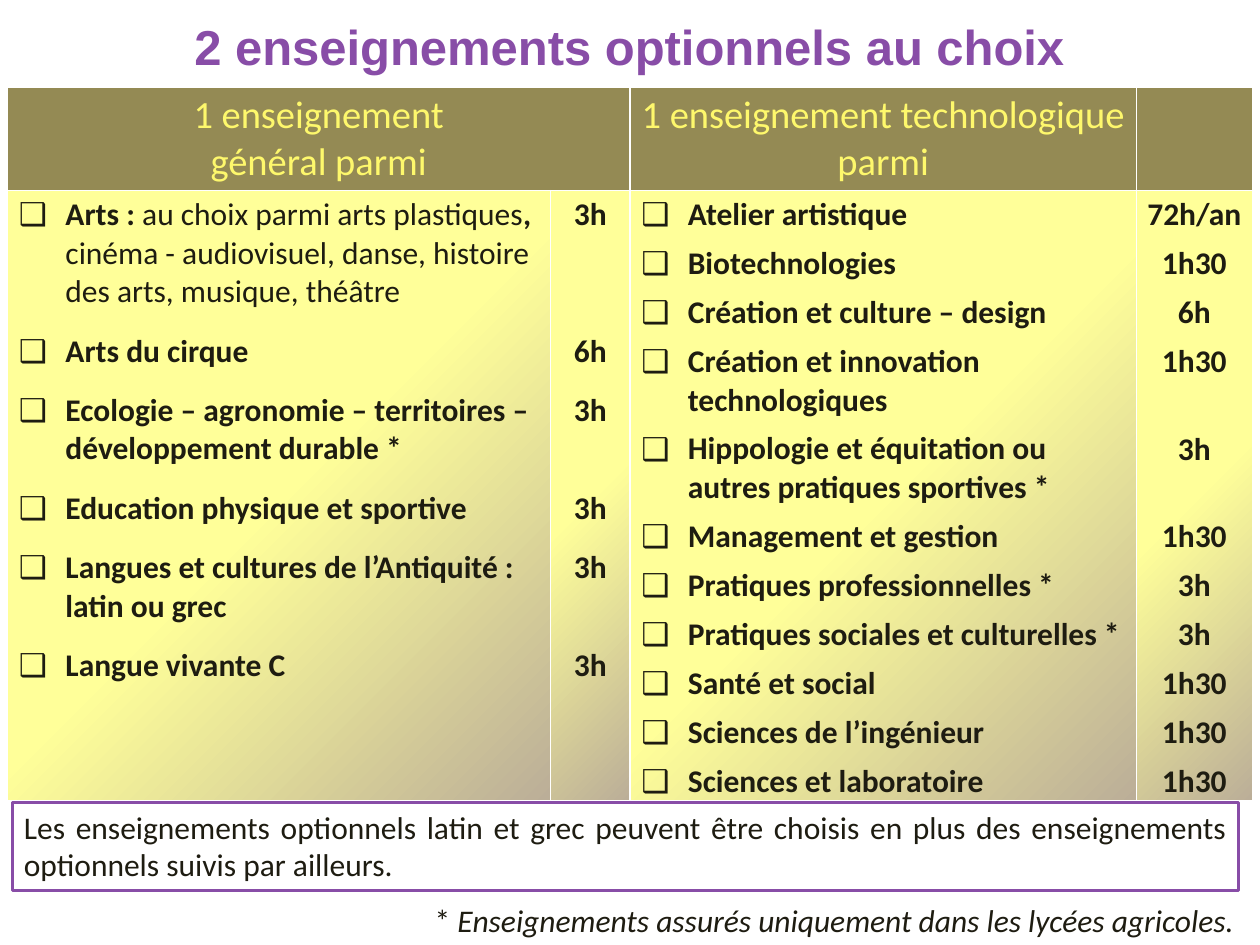
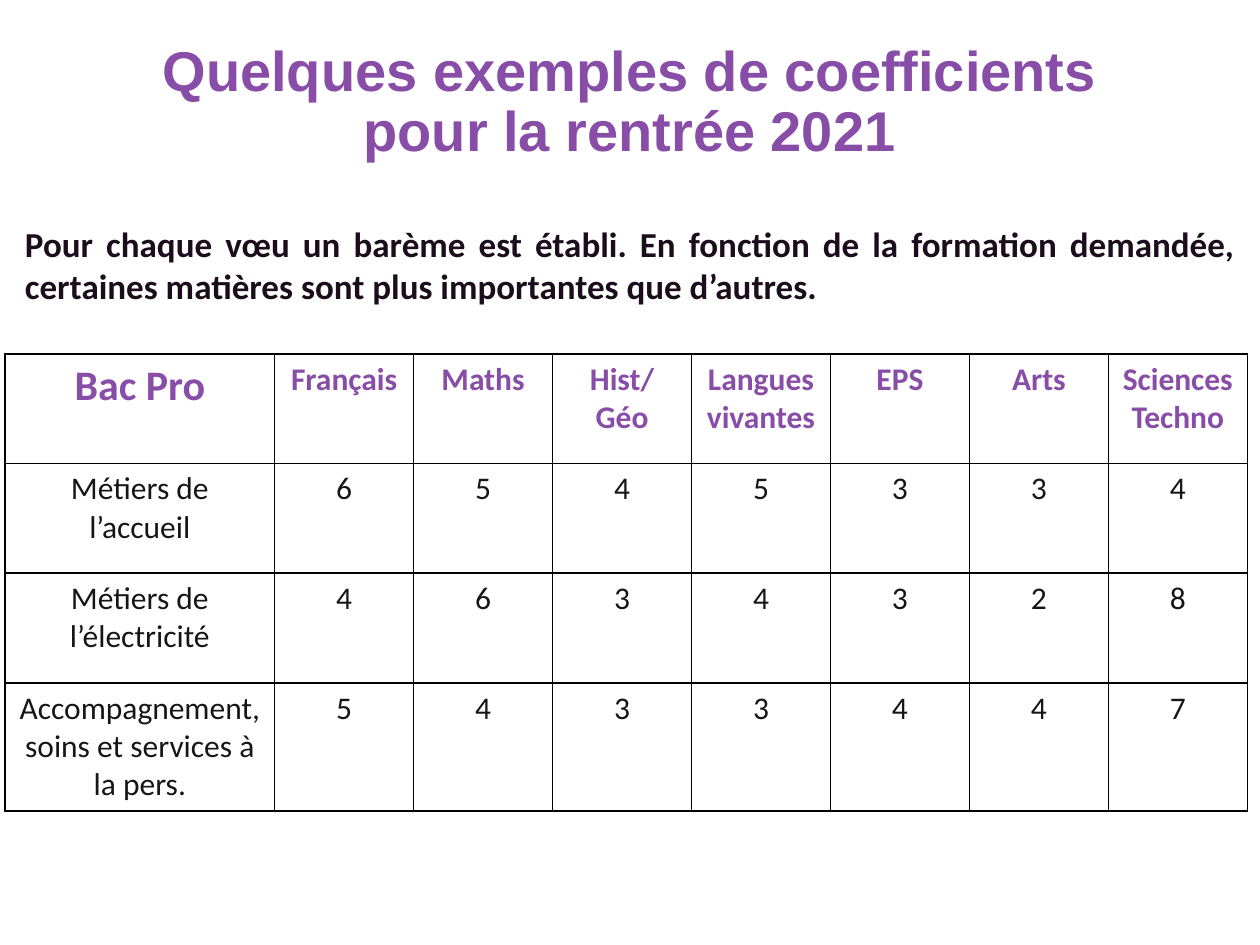
from dataclasses import dataclass, replace

from lxml import etree
from pptx import Presentation
from pptx import util as u
from pptx.dml.color import RGBColor
from pptx.enum import shapes, text
from pptx.oxml import ns

# Shared look
PURPLE, INK, KHAKI, LEMON = "884DA7", "1E1C11", "948A54", "FEF86C"
WHITE, BLACK = "FFFFFF", "000000"
LINE_HEIGHT = 22  # points, one line of 18 pt body text
ALIGN = text.PP_ALIGN
ANCHOR = text.MSO_ANCHOR


@dataclass(frozen=True)
class Style:
    size: float
    color: str
    bold: bool = False
    italic: bool = False
    name: str = "Calibri"


@dataclass(frozen=True)
class Box:
    left: float
    top: float
    width: float
    height: float

    def lengths(self) -> tuple:
        return tuple(map(u.Inches, (self.left, self.top, self.width, self.height)))


@dataclass(frozen=True)
class Option:
    """A course: label pieces alternate bold and plain, lines is its height."""
    hours: str
    label: tuple[str, ...]
    lines: int = 1


BODY = Style(18, INK)
STRONG = replace(BODY, bold=True)

GENERAL = [
    Option("3h", ("Arts : ", "au choix parmi arts plastiques", ", ",
                  "cinéma - audiovisuel, danse, histoire des arts, musique, théâtre"), 3),
    Option("6h", ("Arts du cirque",)),
    Option("3h", ("Ecologie – agronomie – territoires – développement durable *",), 2),
    Option("3h", ("Education physique et sportive",)),
    Option("3h", ("Langues et cultures de l’Antiquité : latin ou grec",), 2),
    Option("3h", ("Langue vivante C",)),
]
TECHNOLOGICAL = [
    Option("72h/an", ("Atelier artistique",)),
    Option("1h30", ("Biotechnologies",)),
    Option("6h", ("Création et culture – design",)),
    Option("1h30", ("Création et innovation technologiques",), 2),
    Option("3h", ("Hippologie et équitation ou autres pratiques sportives *",), 2),
    Option("1h30", ("Management et gestion",)),
    Option("3h", ("Pratiques professionnelles *",)),
    Option("3h", ("Pratiques sociales et culturelles *",)),
    Option("1h30", ("Santé et social",)),
    Option("1h30", ("Sciences de l’ingénieur",)),
    Option("1h30", ("Sciences et laboratoire",)),
]
COEFFICIENTS = [
    ("Bac Pro", "Français", "Maths", "Hist/\nGéo", "Langues vivantes", "EPS", "Arts",
     "Sciences Techno"),
    ("Métiers de l’accueil", 6, 5, 4, 5, 3, 3, 4),
    ("Métiers de l’électricité", 4, 6, 3, 4, 3, 2, 8),
    ("Accompagnement, soins et services à la pers.", 5, 4, 3, 3, 4, 4, 7),
]


# Text helpers
def rgb(color: str) -> RGBColor:
    return RGBColor.from_string(color)


def add_run(paragraph, words: str, style: Style) -> None:
    run = paragraph.add_run()
    run.text = words
    values = {"size": u.Pt(style.size), "bold": style.bold,
              "italic": style.italic, "name": style.name}
    for attribute, value in values.items():
        setattr(run.font, attribute, value)
    run.font.color.rgb = rgb(style.color)


def next_paragraph(frame):
    first = frame.paragraphs[0]
    return frame.add_paragraph() if first.runs else first


def write(frame, words: str, style: Style, **formats) -> None:
    """Write each line of words as a paragraph with the given format values."""
    for line in words.split("\n"):
        paragraph = next_paragraph(frame)
        add_run(paragraph, line, style)
        for attribute, value in formats.items():
            setattr(paragraph, attribute, value)


def set_frame(frame, inset_x: float, inset_y: float, anchor=ANCHOR.TOP) -> None:
    values = {"word_wrap": True, "auto_size": text.MSO_AUTO_SIZE.NONE,
              "vertical_anchor": anchor,
              "margin_left": u.Inches(inset_x), "margin_right": u.Inches(inset_x),
              "margin_top": u.Inches(inset_y), "margin_bottom": u.Inches(inset_y)}
    for attribute, value in values.items():
        setattr(frame, attribute, value)


def set_title(slide, box: Box, words: str, size: float, anchor, **formats) -> None:
    title = slide.shapes.title
    title.left, title.top, title.width, title.height = box.lengths()
    set_frame(title.text_frame, 0.1, 0.05, anchor)
    style = Style(size, PURPLE, bold=True, name="Arial")
    write(title.text_frame, words, style, alignment=ALIGN.CENTER, **formats)


def add_text(slide, box: Box, inset_x: float, inset_y: float):
    frame = slide.shapes.add_textbox(*box.lengths()).text_frame
    set_frame(frame, inset_x, inset_y)
    return frame


# Table helpers
def child(parent, tag: str, **attributes):
    return etree.SubElement(parent, ns.qn(tag), attributes)


def add_table(slide, box: Box, widths: list[float], heights: list[float]):
    table = slide.shapes.add_table(len(heights), len(widths), *box.lengths()).table
    table.first_row = table.horz_banding = False
    for column, width in zip(table.columns, widths):
        column.width = u.Inches(width)
    for row, height in zip(table.rows, heights):
        row.height = u.Inches(height)
    return table


def set_borders(cell, color: str) -> None:
    properties = cell._tc.get_or_add_tcPr()
    for side in "LRTB":
        edge = child(properties, f"a:ln{side}", w=str(u.Pt(1)))
        child(child(edge, "a:solidFill"), "a:srgbClr", val=color)


def set_margins(cell, sides: float, top: float, bottom: float) -> None:
    cell.margin_left = cell.margin_right = u.Inches(sides)
    cell.margin_top, cell.margin_bottom = u.Inches(top), u.Inches(bottom)


def fill_gradient(cell) -> None:
    gradient = child(cell._tc.get_or_add_tcPr(), "a:gradFill", rotWithShape="1")
    stops = child(gradient, "a:gsLst")
    for position, color in (("50000", "FFFF99"), ("100000", "BBAE98")):
        child(child(stops, "a:gs", pos=position), "a:srgbClr", val=color)
    shade = child(gradient, "a:path", path="circle")
    child(shade, "a:fillToRect", r="100000", b="100000")


def write_options(label_cell, hours_cell, options: list[Option], gap: float) -> None:
    """List labels with check boxes, and hours level with their first lines."""
    previous_lines = 1
    hang = u.Inches(0.37)
    for option in options:
        label = next_paragraph(label_cell.text_frame)
        for index, piece in enumerate(option.label):
            add_run(label, piece, BODY if index % 2 else STRONG)
        label.space_before = u.Pt(gap)
        properties = label._p.get_or_add_pPr()
        properties.set("marL", str(hang))
        properties.set("indent", str(-hang))
        child(properties, "a:buFont", typeface="Arial")
        child(properties, "a:buChar", char="❑")

        above = gap + LINE_HEIGHT * (previous_lines - 1)
        write(hours_cell.text_frame, option.hours, STRONG,
              alignment=ALIGN.CENTER, space_before=u.Pt(above))
        previous_lines = option.lines


# Slide 1: optional courses
def build_options(slide) -> None:
    set_title(slide, Box(0.31, 0.05, 9.37, 0.63),
              "2 enseignements optionnels au choix", 28, ANCHOR.MIDDLE)

    table = add_table(slide, Box(0.06, 0.69, 9.88, 5.6),
                      [4.31, 0.63, 4.02, 0.92], [0.82, 4.78])
    for column in range(4):
        header, body = table.cell(0, column), table.cell(1, column)
        for cell in (header, body):
            set_borders(cell, WHITE)
        header.fill.solid()
        header.fill.fore_color.rgb = rgb(KHAKI)
        fill_gradient(body)
        holds_hours = column % 2 == 1
        set_margins(header, 0.09, 0.04, 0.04)
        set_margins(body, 0.03 if holds_hours else 0.09, 0.04, 0)
    table.cell(0, 0).merge(table.cell(0, 1))
    headings = {0: "1 enseignement\ngénéral parmi",
                2: "1 enseignement technologique parmi"}
    for column, heading in headings.items():
        write(table.cell(0, column).text_frame, heading, Style(22, LEMON),
              alignment=ALIGN.CENTER)
    write_options(table.cell(1, 0), table.cell(1, 1), GENERAL, 12)
    write_options(table.cell(1, 2), table.cell(1, 3), TECHNOLOGICAL, 6)

    # Remark and footnote
    remark = slide.shapes.add_shape(shapes.MSO_SHAPE.RECTANGLE,
                                    *Box(0.1, 6.37, 9.73, 0.7).lengths())
    remark.shadow.inherit = False
    remark.fill.background()
    remark.line.color.rgb = rgb(PURPLE)
    remark.line.width = u.Pt(1.5)
    set_frame(remark.text_frame, 0.09, 0.04)
    write(remark.text_frame,
          "Les enseignements optionnels latin et grec peuvent être choisis en plus des "
          "enseignements optionnels suivis par ailleurs.", BODY, alignment=ALIGN.JUSTIFY)

    footnote = add_text(slide, Box(3.36, 7.11, 6.64, 0.39), 0.09, 0.04).paragraphs[0]
    add_run(footnote, "*", BODY)
    add_run(footnote, " Enseignements assurés uniquement dans les lycées agricoles.",
            replace(BODY, italic=True))


# Slide 2: coefficients
def build_coefficients(slide) -> None:
    set_title(slide, Box(0, 0.29, 10, 1.16),
              "Quelques exemples de coefficients\npour la rentrée 2021", 32,
              ANCHOR.TOP, line_spacing=0.9)
    write(add_text(slide, Box(0.1, 1.72, 9.8, 0.8), 0.1, 0.05),
          "Pour chaque vœu un barème est établi. En fonction de la formation demandée, "
          "certaines matières sont plus importantes que d’autres.",
          Style(20, "1B0D1C", bold=True), alignment=ALIGN.JUSTIFY)

    frame = Box(0.04, 2.81, 9.86, 3.45)
    course_width = 2.14
    subject_width = (frame.width - course_width) / 7
    table = add_table(slide, frame, [course_width] + [subject_width] * 7,
                      [0.87] * 3 + [0.84])
    heading = Style(18, PURPLE, bold=True)
    for row, values in enumerate(COEFFICIENTS):
        for column, value in enumerate(values):
            cell = table.cell(row, column)
            set_borders(cell, BLACK)
            cell.fill.background()
            style = Style(18, "161616") if row else heading
            if row == column == 0:
                style = replace(heading, size=24)
            write(cell.text_frame, str(value), style, alignment=ALIGN.CENTER)


def main() -> None:
    deck = Presentation()
    deck.slide_width, deck.slide_height = u.Inches(10), u.Inches(7.5)
    title_only = deck.slide_layouts[5]
    for build in (build_options, build_coefficients):
        build(deck.slides.add_slide(title_only))
    deck.save("out.pptx")


if __name__ == "__main__":
    main()
